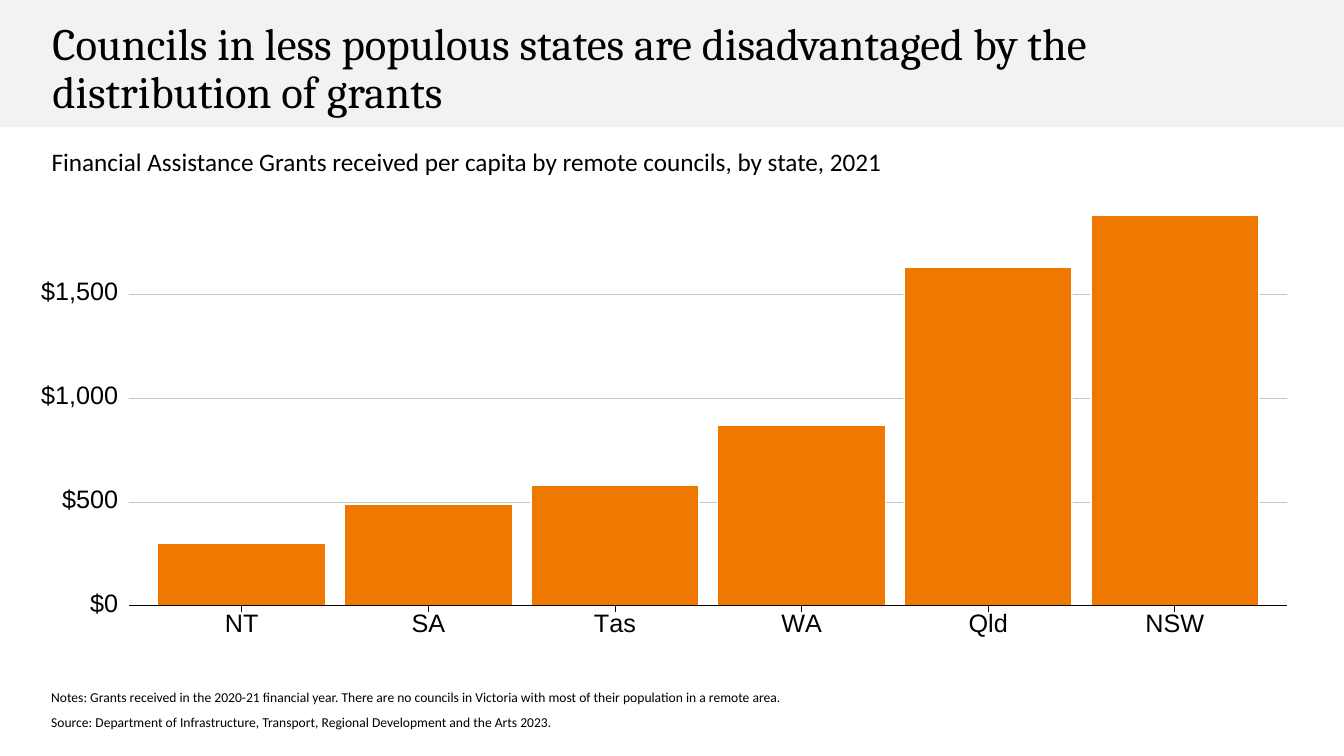
from lxml import etree
from pptx import Presentation
from pptx.chart.data import CategoryChartData
from pptx.dml.color import RGBColor
from pptx.enum.chart import XL_CHART_TYPE, XL_TICK_MARK
from pptx.enum.shapes import MSO_CONNECTOR, MSO_SHAPE
from pptx.enum.text import MSO_ANCHOR, PP_ALIGN
from pptx.oxml import parse_xml
from pptx.oxml.ns import nsdecls, qn
from pptx.util import Cm, Pt

COLUMNS, NO_TICKS = XL_CHART_TYPE.COLUMN_CLUSTERED, XL_TICK_MARK.NONE
STRAIGHT, RECTANGLE = MSO_CONNECTOR.STRAIGHT, MSO_SHAPE.RECTANGLE
TOP, MIDDLE = MSO_ANCHOR.TOP, MSO_ANCHOR.MIDDLE
LEFT, RIGHT = PP_ALIGN.LEFT, PP_ALIGN.RIGHT

# Content
TITLE = "Councils in less populous states are disadvantaged by the distribution of grants"
SUBTITLE = "Financial Assistance Grants received per capita by remote councils, by state, 2021"
FOOTNOTES = [
    "Notes: Grants received in the 2020-21 financial year. There are no councils in Victoria "
    "with most of their population in a remote area.",
    "Source: Department of Infrastructure, Transport, Regional Development and the Arts 2023.",
]
GRANTS = {"NT": 300, "SA": 490, "Tas": 580, "WA": 870, "Qld": 1630, "NSW": 1880}
SCALE_MAXIMUM, SCALE_STEP = 1900, 500


class Theme:
    black = RGBColor(0x00, 0x00, 0x00)
    white = RGBColor(0xFF, 0xFF, 0xFF)
    band = RGBColor(0xF2, 0xF2, 0xF2)
    bar = RGBColor(0xEF, 0x79, 0x00)
    grid = RGBColor(0xC3, 0xC7, 0xCB)
    title_font, body_font, chart_font = "Cambria", "Calibri", "Arial"
    title_size, body_size, note_size = Pt(32), Pt(18), Pt(9.7)


# Geometry in centimetres: left, top, width, height
PAGE = (33.87, 19.05)
BAND = (0, 0, PAGE[0], 3.2)
TITLE_BOX = (1.07, 1.02, 26.77, 1.5)
SUBTITLE_BOX = (1.05, 3.65, 31.67, 0.94)
FOOTNOTE_BOX = (1.04, 17.34, 29.62, 1.27)
CHART = (1.04, 5.03, 31.7, 11.91)
PLOT = (3.74, 5.33, 28.22, 9.93)
BASELINE = PLOT[1] + PLOT[3]
GRID_LEFT, GRID_RIGHT = 3.26, 32.43
TICK_LENGTH = 0.15
LABEL_LEFT, LABEL_WIDTH, LABEL_HEIGHT, LABEL_RISE = 0.98, 2, 0.7, 0.09


def lengths(numbers):
    return [Cm(number) for number in numbers]


def add_text(page, area, lines, font, size, spacing, anchor=TOP, align=LEFT, inset=True):
    box = page.shapes.add_textbox(*lengths(area))
    frame = box.text_frame
    frame.word_wrap = True
    frame.vertical_anchor = anchor
    if not inset:
        frame.margin_left = frame.margin_right = frame.margin_top = frame.margin_bottom = 0
    for index, line in enumerate(lines):
        para = frame.paragraphs[0] if index == 0 else frame.add_paragraph()
        para.alignment = align
        para.line_spacing = spacing
        if index:
            para.space_before = Pt(10)
        span = para.add_run()
        span.text = line
        span.font.name, span.font.size = font, size
        span.font.color.rgb = Theme.black


def set_line(line, color, width):
    line.color.rgb = color
    line.width = Pt(width)


def add_rule(page, ends, color, width):
    rule = page.shapes.add_connector(STRAIGHT, *lengths(ends))
    set_line(rule.line, color, width)
    etree.SubElement(rule.element.spPr, qn("a:effectLst"))


def add_scale(page):
    for amount in range(0, SCALE_MAXIMUM, SCALE_STEP):
        level = BASELINE - PLOT[3] * amount / SCALE_MAXIMUM
        if amount:
            add_rule(page, (GRID_LEFT, level, GRID_RIGHT, level), Theme.grid, 0.37)
        area = (LABEL_LEFT, level - LABEL_RISE - LABEL_HEIGHT / 2, LABEL_WIDTH, LABEL_HEIGHT)
        add_text(page, area, [f"${amount:,}"], Theme.chart_font, Theme.body_size, 1,
                 MIDDLE, RIGHT, inset=False)


def add_grants_chart(page):
    data = CategoryChartData(number_format='"$"#,##0')
    data.categories = list(GRANTS)
    data.add_series("Grants per capita", list(GRANTS.values()))
    chart = page.shapes.add_chart(COLUMNS, *lengths(CHART), data).chart
    chart.has_legend = chart.has_title = False
    chart.font.name, chart.font.size = Theme.chart_font, Theme.body_size
    chart.font.color.rgb = Theme.black

    # Bars
    plot = chart.plots[0]
    plot.gap_width = 11
    plot.vary_by_categories = False
    bars = plot.series[0].format
    bars.fill.solid()
    bars.fill.fore_color.rgb = Theme.bar
    set_line(bars.line, Theme.white, 1.07)

    # Axes
    dollars, states = chart.value_axis, chart.category_axis
    dollars.minimum_scale, dollars.maximum_scale = 0, SCALE_MAXIMUM
    dollars.major_unit = SCALE_STEP
    dollars.has_major_gridlines = dollars.visible = False
    states.major_tick_mark = NO_TICKS
    states.format.line.fill.background()

    # Fixed place of the plot inside the chart, as fractions of its frame
    fractions = {
        "x": (PLOT[0] - CHART[0]) / CHART[2],
        "y": (PLOT[1] - CHART[1]) / CHART[3],
        "w": PLOT[2] / CHART[2],
        "h": PLOT[3] / CHART[3],
    }
    values = "".join(f'<c:{key} val="{value:.4f}"/>' for key, value in fractions.items())
    layout = parse_xml(
        f'<c:layout {nsdecls("c")}><c:manualLayout><c:layoutTarget val="inner"/>'
        f'<c:xMode val="edge"/><c:yMode val="edge"/>{values}</c:manualLayout></c:layout>')
    area = chart.element.find(".//" + qn("c:plotArea"))
    for previous in area.findall(qn("c:layout")):
        area.remove(previous)
    area.insert(0, layout)

    # Clear background, so the grid shows through
    clear = f'<c:spPr {nsdecls("c", "a")}><a:noFill/><a:ln><a:noFill/></a:ln></c:spPr>'
    area.append(parse_xml(clear))
    chart.element.find(qn("c:chart")).addnext(parse_xml(clear))


def add_baseline(page):
    add_rule(page, (GRID_LEFT, BASELINE, GRID_RIGHT, BASELINE), Theme.black, 0.75)
    step = PLOT[2] / len(GRANTS)
    for index in range(len(GRANTS)):
        center = PLOT[0] + (index + 0.5) * step
        add_rule(page, (center, BASELINE, center, BASELINE + TICK_LENGTH), Theme.black, 0.56)


def main():
    deck = Presentation()
    deck.slide_width, deck.slide_height = lengths(PAGE)
    page = deck.slides.add_slide(deck.slide_layouts[6])

    # Heading
    band = page.shapes.add_shape(RECTANGLE, *lengths(BAND))
    band.shadow.inherit = False
    band.fill.solid()
    band.fill.fore_color.rgb = Theme.band
    band.line.fill.background()
    add_text(page, TITLE_BOX, [TITLE], Theme.title_font, Theme.title_size, 0.9, MIDDLE)
    add_text(page, SUBTITLE_BOX, [SUBTITLE], Theme.body_font, Theme.body_size, 0.9)

    # Chart and footnotes
    add_scale(page)
    add_grants_chart(page)
    add_baseline(page)
    add_text(page, FOOTNOTE_BOX, FOOTNOTES, Theme.body_font, Theme.note_size, 0.7)
    deck.save("out.pptx")


if __name__ == "__main__":
    main()
